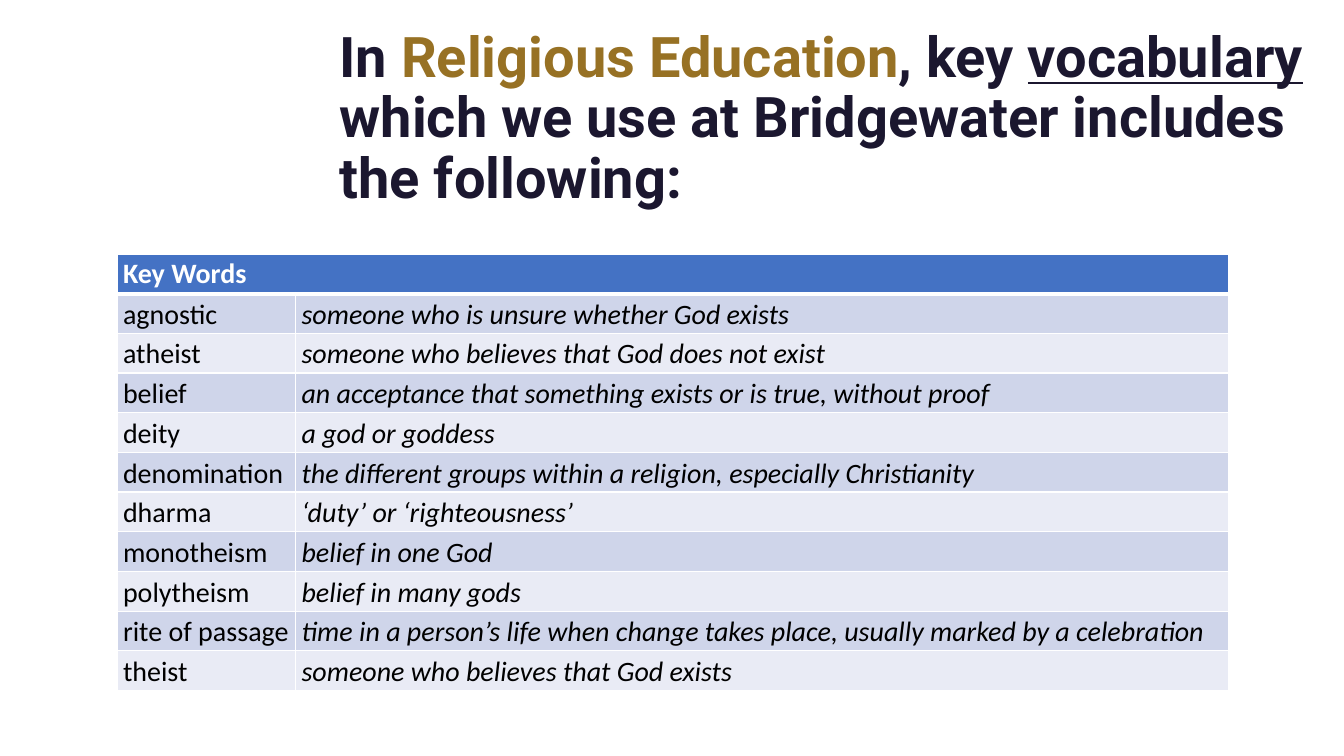
import pptx
import pptx.dml.color
import pptx.enum.text
import pptx.oxml
import pptx.util
from pptx.util import Cm

KEY_WORDS = [
    ("agnostic", "someone who is unsure whether God exists"),
    ("atheist", "someone who believes that God does not exist"),
    ("belief", "an acceptance that something exists or is true, without proof"),
    ("deity", "a god or goddess"),
    ("denomination", "the different groups within a religion, especially Christianity"),
    ("dharma", "‘duty’ or ‘righteousness’"),
    ("monotheism", "belief in one God"),
    ("polytheism", "belief in many gods"),
    ("rite of passage", "time in a person’s life when change takes place, usually marked by a celebration"),
    ("theist", "someone who believes that God exists"),
]
NAVY, GOLD, WHITE, BLACK = "1B172F", "977124", "FFFFFF", "000000"
HEADER_FILL = "4472C4"
BAND_FILLS = ["CFD5EA", "E9EBF5"]
BORDER = (
    '<a:{side} xmlns:a="http://schemas.openxmlformats.org/drawingml/2006/main" w="{width}">'
    '<a:solidFill><a:srgbClr val="{color}"/></a:solidFill></a:{side}>'
)


def add_run(paragraph, text, font_name, size, color, bold=False, italic=False, underline=False):
    run = paragraph.add_run()
    run.text = text
    run.font.name = font_name
    run.font.size = pptx.util.Pt(size)
    run.font.bold = bold
    run.font.italic = italic
    run.font.underline = underline
    run.font.color.rgb = pptx.dml.color.RGBColor.from_string(color)


def style_cell(cell, fill, top=1, bottom=1):
    properties = cell._tc.get_or_add_tcPr()
    for side, points in (("lnL", 1), ("lnR", 1), ("lnT", top), ("lnB", bottom)):
        border = BORDER.format(side=side, width=pptx.util.Pt(points), color=WHITE)
        properties.append(pptx.oxml.parse_xml(border))
    cell.fill.solid()
    cell.fill.fore_color.rgb = pptx.dml.color.RGBColor.from_string(fill)
    cell.vertical_anchor = pptx.enum.text.MSO_ANCHOR.MIDDLE
    cell.margin_left = cell.margin_right = Cm(0.15)
    cell.margin_top = cell.margin_bottom = 0


presentation = pptx.Presentation()
presentation.slide_width = Cm(33.87)
presentation.slide_height = Cm(19.05)
slide = presentation.slides.add_slide(presentation.slide_layouts[6])

# Title
title = slide.shapes.add_textbox(Cm(8.31), Cm(0.53), Cm(25.15), Cm(4.9))
title.text_frame.word_wrap = True
title.text_frame.vertical_anchor = pptx.enum.text.MSO_ANCHOR.BOTTOM
paragraph = title.text_frame.paragraphs[0]
paragraph.line_spacing = 0.9
for text, color, underline in [
    ("In ", NAVY, False),
    ("Religious Education", GOLD, False),
    (", key ", NAVY, False),
    ("vocabulary", NAVY, True),
    (" which we use at Bridgewater includes the following:", NAVY, False),
]:
    add_run(paragraph, text, "Roboto", 40, color, bold=True, underline=underline)

# Vocabulary table
row_count = len(KEY_WORDS) + 1
table = slide.shapes.add_table(row_count, 2, Cm(2.95), Cm(6.4), Cm(28), Cm(row_count)).table
table.columns[0].width = Cm(4.5)
table.columns[1].width = Cm(23.5)

# Header row
for cell in table.rows[0].cells:
    style_cell(cell, HEADER_FILL, bottom=3)
table.cell(0, 0).merge(table.cell(0, 1))
add_run(table.cell(0, 0).text_frame.paragraphs[0], "Key Words", "Calibri", 20, WHITE, bold=True)

# Banded rows of words and meanings
for row, entry in enumerate(KEY_WORDS, start=1):
    for column, text in enumerate(entry):
        cell = table.cell(row, column)
        style_cell(cell, BAND_FILLS[(row - 1) % 2], top=3 if row == 1 else 1)
        paragraph = cell.text_frame.paragraphs[0]
        paragraph.line_spacing = 1.07
        add_run(paragraph, text, "Calibri", 20, BLACK, italic=column == 1)

presentation.save("out.pptx")
